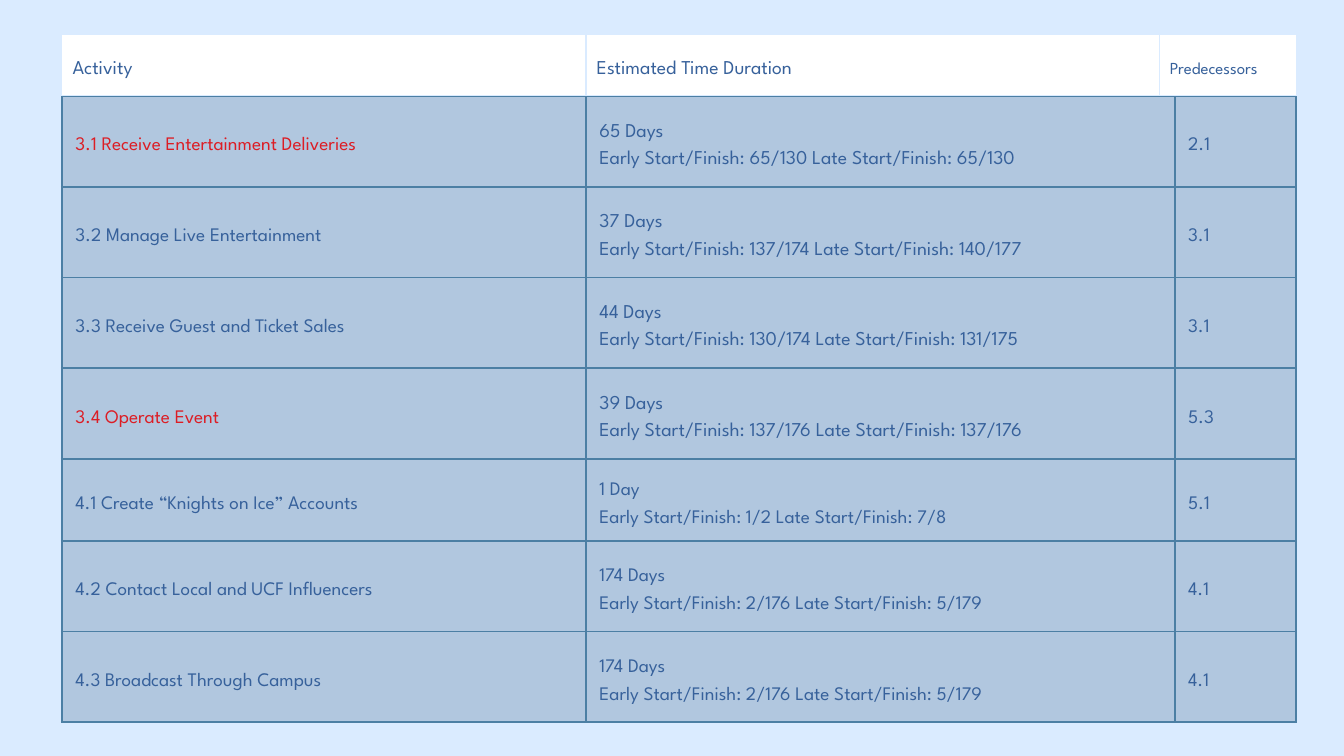
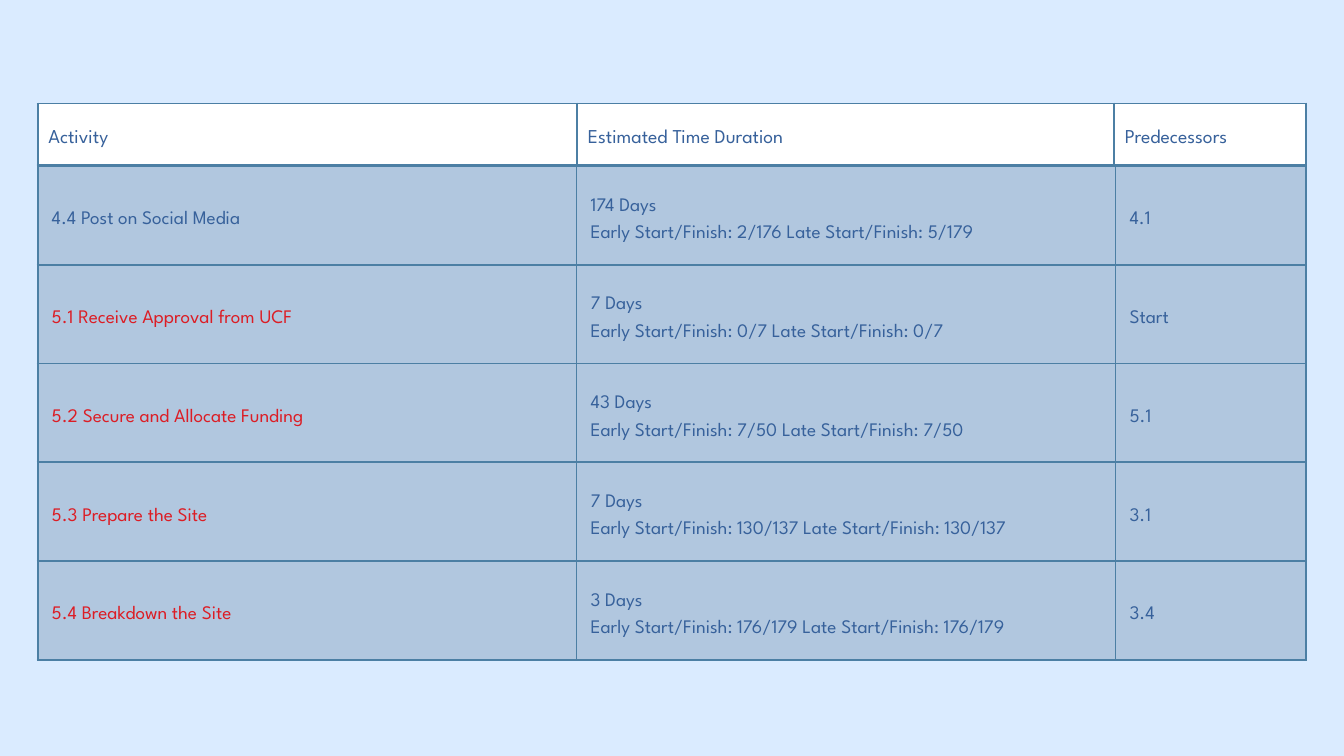
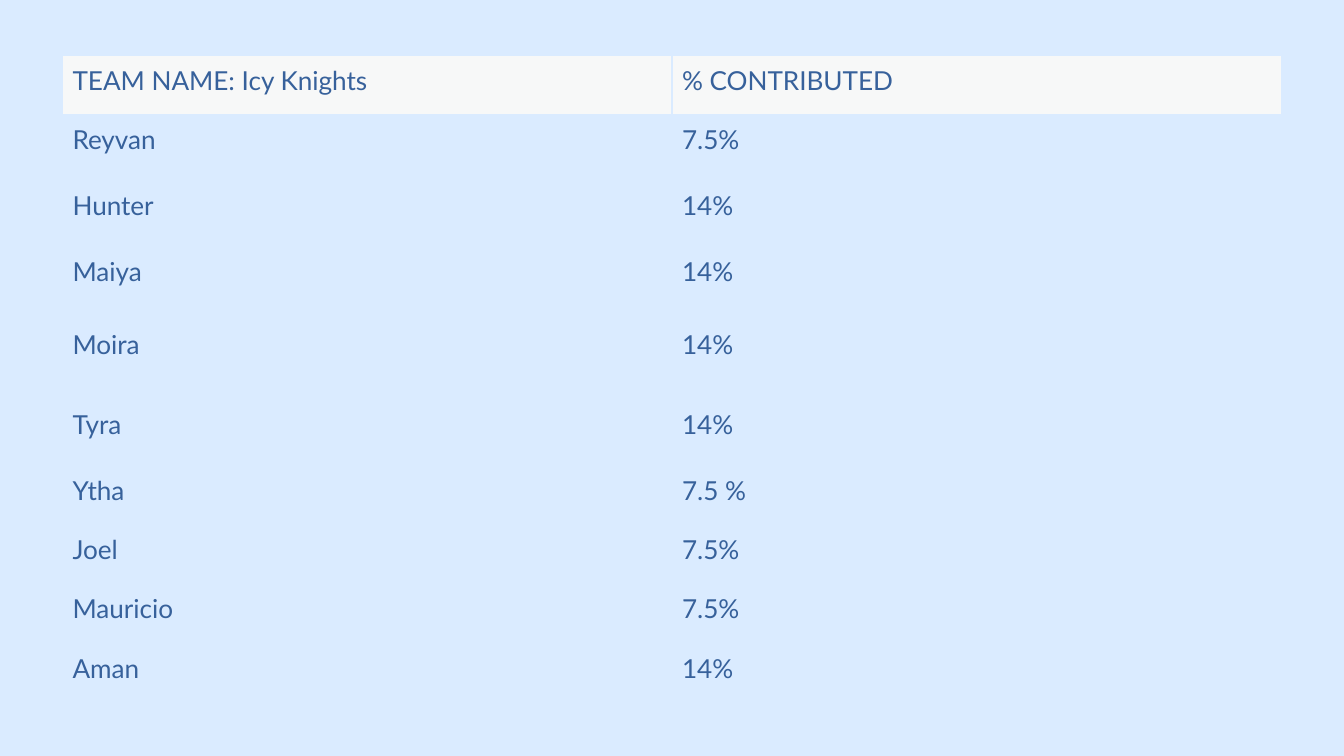
from lxml import etree
from pptx import Presentation
from pptx.dml.color import RGBColor
from pptx.enum.text import MSO_ANCHOR
from pptx.oxml.ns import qn
from pptx.util import Inches, Pt

MIDDLE = MSO_ANCHOR.MIDDLE
BLANK_LAYOUT = 6
NO_STYLE = "{2D5ABB26-0587-4C30-8999-92F81FD0307C}"
COLORS = {
    "background": "DAEBFF",
    "text": "37619B",
    "critical": "DC1D25",
    "body": "B1C7DF",
    "header": "FFFFFF",
    "team_header": "F7F8F8",
    "grid": "4C7FA4",
}
SCHEDULE_FONT, TEAM_FONT = "League Spartan", "Lato"
BODY_SIZE, HEADER_SIZE, TEAM_SIZE = 20.5, 21, 28
SCHEDULE_SPACING, TEAM_SPACING = 29.4, 25.2

# Content: activity, days, early start/finish, late start/finish, predecessor
HEADINGS = ["Activity", "Estimated Time Duration", "Predecessors"]
CRITICAL = {"3.1", "3.4", "5.1", "5.2", "5.3", "5.4"}
FIRST_ACTIVITIES = [
    ("3.1 Receive Entertainment Deliveries", "65 Days", "65/130", "65/130", "2.1"),
    ("3.2 Manage Live Entertainment", "37 Days", "137/174", "140/177", "3.1"),
    ("3.3 Receive Guest and Ticket Sales", "44 Days", "130/174", "131/175", "3.1"),
    ("3.4 Operate Event", "39 Days", "137/176", "137/176", "5.3"),
    ("4.1 Create “Knights on Ice” Accounts", "1 Day", "1/2", "7/8", "5.1"),
    ("4.2 Contact Local and UCF Influencers", "174 Days", "2/176", "5/179", "4.1"),
    ("4.3 Broadcast Through Campus", "174 Days", "2/176", "5/179", "4.1"),
]
LAST_ACTIVITIES = [
    ("4.4 Post on Social Media", "174 Days", "2/176", "5/179", "4.1"),
    ("5.1 Receive Approval from UCF", "7 Days", "0/7", "0/7", "Start"),
    ("5.2 Secure and Allocate Funding", "43 Days", "7/50", "7/50", "5.1"),
    ("5.3 Prepare the Site", "7 Days", "130/137", "130/137", "3.1"),
    ("5.4 Breakdown the Site", "3 Days", "176/179", "176/179", "3.4"),
]
TEAM = [
    ("TEAM NAME: Icy Knights", "% CONTRIBUTED"),
    ("Reyvan", "7.5%"),
    ("Hunter", "14%"),
    ("Maiya", "14%"),
    ("Moira", "14%"),
    ("Tyra", "14%"),
    ("Ytha", "7.5 %"),
    ("Joel", "7.5%"),
    ("Mauricio", "7.5%"),
    ("Aman", "14%"),
]
TEAM_ROW_HEIGHTS = [0.88, 0.88, 1.08, 0.88, 1.3, 1.08] + [0.88] * 4

# Layout of the two schedule slides; large_rows counts rows with larger durations
SCHEDULES = [
    {
        "activities": FIRST_ACTIVITIES,
        "large_rows": 4,
        "body": {"box": (0.92, 1.43, 18.37, 9.28), "columns": [7.8, 8.76, 1.81],
                 "rows": [1.35] * 4 + [0.99] + [1.35] * 2, "inset": 0.2},
        "header": {"box": (0.92, 0.51, 18.37, 1.08), "columns": [7.8, 8.53, 2.04],
                   "rows": [0.91], "border": ("background", 1.5)},
        "predecessors_size": 18,
    },
    {
        "activities": LAST_ACTIVITIES,
        "large_rows": 0,
        "body": {"box": (0.56, 2.47, 18.88, 7.62), "columns": [8.02, 8.02, 2.84],
                 "rows": [1.47] * 5, "inset": 0.21},
        "header": {"box": (0.56, 1.54, 18.88, 0.92), "columns": [8.03, 7.99, 2.86],
                   "rows": [0.92], "border": ("grid", 2.25)},
        "predecessors_size": HEADER_SIZE,
    },
]


def color(name):
    return RGBColor.from_string(COLORS[name])


def set_borders(cell, name, width):
    properties = cell._tc.get_or_add_tcPr()
    for position, side in enumerate(("lnL", "lnR", "lnT", "lnB")):
        line = etree.Element(qn(f"a:{side}"), w=str(Pt(width)))
        fill = etree.SubElement(line, qn("a:solidFill"))
        etree.SubElement(fill, qn("a:srgbClr"), val=COLORS[name])
        properties.insert(position, line)


def add_grid(slide, box, columns, rows, border, inset):
    """Add a table with borders and margins, and return it."""
    frame = slide.shapes.add_table(len(rows), len(columns), *map(Inches, box))
    table = frame.table
    table.first_row = table.horz_banding = False
    table._tbl.tblPr.find(qn("a:tableStyleId")).text = NO_STYLE
    for column, width in zip(table.columns, columns):
        column.width = Inches(width)
    for row, height in zip(table.rows, rows):
        row.height = Inches(height)
    frame.height = Inches(box[3])
    for cell in table.iter_cells():
        set_borders(cell, *border)
        cell.vertical_anchor = MIDDLE
        cell.margin_left = cell.margin_right = Inches(inset)
        cell.margin_top = cell.margin_bottom = Inches(inset)
    return table


def write_cell(cell, text, size, fill, ink="text", font=SCHEDULE_FONT,
               spacing=SCHEDULE_SPACING):
    cell.text = text
    if fill:
        cell.fill.solid()
        cell.fill.fore_color.rgb = color(fill)
    else:
        cell.fill.background()
    for paragraph in cell.text_frame.paragraphs:
        paragraph.line_spacing = Pt(spacing)
        for run in paragraph.runs:
            run.font.name = font
            run.font.size = Pt(size)
            run.font.color.rgb = color(ink)


def add_schedule(slide, schedule):
    # Activities
    body = add_grid(slide, **schedule["body"], border=("grid", 2.25))
    for index, (activity, days, early, late, predecessor) in enumerate(schedule["activities"]):
        ink = "critical" if activity.split()[0] in CRITICAL else "text"
        duration = f"{days}\nEarly Start/Finish: {early} Late Start/Finish: {late}"
        duration_size = HEADER_SIZE if index < schedule["large_rows"] else BODY_SIZE
        write_cell(body.cell(index, 0), activity, BODY_SIZE, "body", ink)
        write_cell(body.cell(index, 1), duration, duration_size, "body")
        write_cell(body.cell(index, 2), predecessor, BODY_SIZE, "body")

    # Headings
    header = add_grid(slide, **schedule["header"], inset=0.16)
    sizes = [HEADER_SIZE, HEADER_SIZE, schedule["predecessors_size"]]
    for cell, heading, size in zip(header.iter_cells(), HEADINGS, sizes):
        write_cell(cell, heading, size, "header")


def add_team(slide):
    table = add_grid(slide, (0.93, 0.82, 18.15, 9.6), [9.07, 9.07],
                     TEAM_ROW_HEIGHTS, ("background", 1.5), 0.15)
    for row, texts in enumerate(TEAM):
        for column, text in enumerate(texts):
            write_cell(table.cell(row, column), text, TEAM_SIZE,
                       None if row else "team_header",
                       font=TEAM_FONT, spacing=TEAM_SPACING)


def main():
    presentation = Presentation()
    presentation.slide_width, presentation.slide_height = Inches(20), Inches(11.25)
    background = presentation.slide_master.background.fill
    background.solid()
    background.fore_color.rgb = color("background")
    layout = presentation.slide_layouts[BLANK_LAYOUT]

    for schedule in SCHEDULES:
        add_schedule(presentation.slides.add_slide(layout), schedule)
    add_team(presentation.slides.add_slide(layout))
    presentation.save("out.pptx")


if __name__ == "__main__":
    main()
